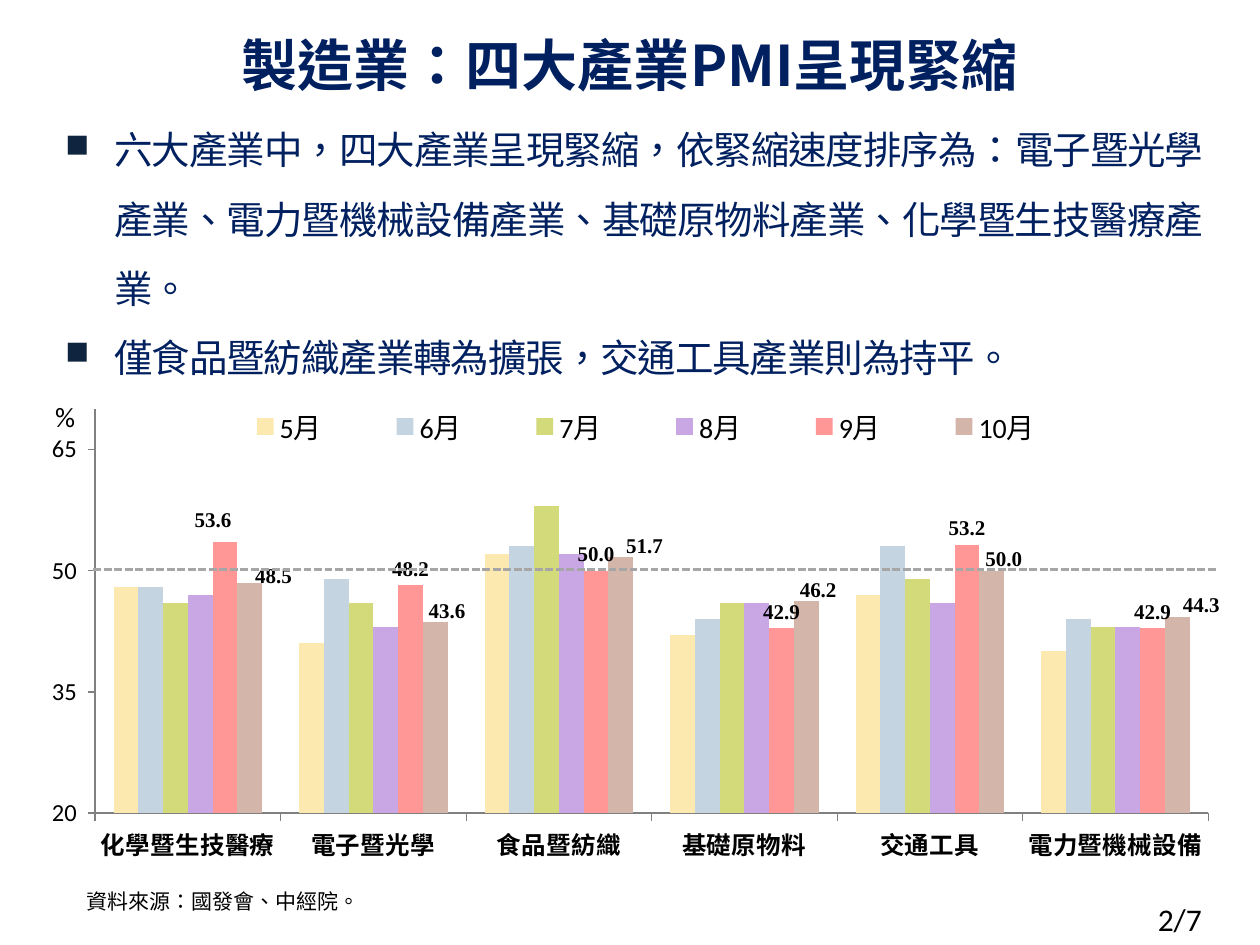
from lxml.etree import SubElement
from pptx import Presentation
from pptx.chart.data import CategoryChartData
from pptx.dml.color import RGBColor
from pptx.enum.chart import XL_CHART_TYPE, XL_LABEL_POSITION, XL_LEGEND_POSITION, XL_TICK_MARK
from pptx.enum.dml import MSO_LINE
from pptx.enum.shapes import MSO_CONNECTOR, MSO_SHAPE
from pptx.enum.text import MSO_ANCHOR, PP_ALIGN
from pptx.oxml import parse_xml
from pptx.oxml.ns import nsdecls, qn
from pptx.util import Inches, Pt

COLORS = {
    "black": "000000", "navy": "002060", "bullet": "0F243E",
    "axis": "808080", "threshold": "A6A6A6",
    "5月": "FCE9AF", "6月": "C5D4E1", "7月": "D2DA7A",
    "8月": "C9A6E4", "9月": "FF9797", "10月": "D4B5AA",
}
LATIN, CJK = "Calibri", "Noto Sans CJK SC"

INDUSTRIES = ["化學暨生技醫療", "電子暨光學", "食品暨紡織", "基礎原物料", "交通工具", "電力暨機械設備"]
MONTHLY_PMI = {
    "5月": [48, 41, 52, 42, 47, 40],
    "6月": [48, 49, 53, 44, 53, 44],
    "7月": [46, 46, 58, 46, 49, 43],
    "8月": [47, 43, 52, 46, 46, 43],
    "9月": [53.6, 48.2, 50, 42.9, 53.2, 42.9],
    "10月": [48.5, 43.6, 51.7, 46.2, 50, 44.3],
}
# Label shifts as fractions of the chart's width and height
LABEL_SHIFTS = {
    "9月": [(-0.01, -0.01), (0, 0), (0, 0), (0, 0), (0, 0), (0, 0)],
    "10月": [(0.02, 0.02), (0.01, 0.01), (0.02, 0.01), (0.01, 0.01), (0.01, 0.01), (0.02, 0.01)],
}

# Each bullet is a list of (text, letter spacing in hundredths of a point)
BULLETS = [
    [("六大產業中，四大產業呈現緊縮，依緊縮速度排序為", -60), ("：", 0),
     ("電子暨光學產業、電力暨機械設備產業、基礎原物料產業、化學暨生技醫療產業。", -60)],
    [("僅食品暨紡織產業轉為擴張，交通工具產業則為持平。", -60)],
]


def rgb(name):
    return RGBColor.from_string(COLORS[name])


def style_font(font, size, name=LATIN, color="black", bold=False):
    font.size, font.name, font.bold = Pt(size), name, bold
    font.color.rgb = rgb(color)


def add_span(para, text, size, name=LATIN, color="black", bold=False, spacing=0):
    span = para.add_run()
    span.text = text
    style_font(span.font, size, name, color, bold)
    properties = span._r.get_or_add_rPr()
    properties.set("lang", "zh-TW")
    properties.set("spc", str(spacing))
    SubElement(properties, qn("a:ea")).set("typeface", name)


def add_text(page, area, text, size, name=LATIN, color="black", bold=False):
    box = page.shapes.add_textbox(*map(Inches, area))
    box.text_frame.word_wrap = True
    para = box.text_frame.paragraphs[0]
    add_span(para, text, size, name, color, bold)
    return box, para


def add_title(page):
    box, para = add_text(page, (0, 0, 10, 1), "製造業：四大產業PMI呈現緊縮", 32, CJK, "navy", True)
    box.text_frame.vertical_anchor = MSO_ANCHOR.MIDDLE
    para.alignment = PP_ALIGN.CENTER
    para.line_spacing = Pt(40)


def set_bullet(para):
    properties = para._p.get_or_add_pPr()
    properties.set("marL", str(Inches(0.49)))
    properties.set("indent", str(Inches(-0.39)))
    color = SubElement(SubElement(properties, qn("a:buClr")), qn("a:srgbClr"))
    color.set("val", COLORS["bullet"])
    SubElement(properties, qn("a:buSzPct")).set("val", "85000")
    SubElement(properties, qn("a:buChar")).set("char", "■")


def add_bullets(page):
    box = page.shapes.add_shape(MSO_SHAPE.ROUNDED_RECTANGLE, *map(Inches, (0.21, 0.71, 9.54, 2.25)))
    box.shadow.inherit = False
    box.fill.background()
    box.line.fill.background()
    frame = box.text_frame
    frame.word_wrap = True
    frame.vertical_anchor = MSO_ANCHOR.TOP
    frame.margin_top = frame.margin_bottom = 0
    for index, spans in enumerate(BULLETS):
        para = frame.add_paragraph() if index else frame.paragraphs[0]
        para.level = 1
        para.alignment = PP_ALIGN.JUSTIFY
        para.line_spacing = 1.5
        set_bullet(para)
        for text, spacing in spans:
            add_span(para, text, 22, CJK, "navy", spacing=spacing)


def manual_layout(**settings):
    parts = "".join(f'<c:{key} val="{value}"/>' for key, value in settings.items())
    return parse_xml(f'<c:layout {nsdecls("c")}><c:manualLayout>{parts}</c:manualLayout></c:layout>')


def style_axis(axis, name, bold=False):
    axis.has_major_gridlines = False
    axis.major_tick_mark = XL_TICK_MARK.OUTSIDE
    axis.minor_tick_mark = XL_TICK_MARK.NONE
    axis.format.line.color.rgb = rgb("axis")
    axis.format.line.width = Pt(0.75)
    style_font(axis.tick_labels.font, 14, name, bold=bold)


def label_points(series, shifts):
    labels = series.data_labels
    labels.show_value = True
    labels.number_format, labels.number_format_is_linked = "0.0", False
    labels.position = XL_LABEL_POSITION.OUTSIDE_END
    style_font(labels.font, 12, "Times New Roman", bold=True)
    for index, (x, y) in enumerate(shifts):
        label = series.points[index].data_label
        style_font(label.font, 12, "Times New Roman", bold=True)
        label.position = XL_LABEL_POSITION.OUTSIDE_END
        index_element = labels._element.findall(qn("c:dLbl"))[index].find(qn("c:idx"))
        number_format = parse_xml(f'<c:numFmt {nsdecls("c")} formatCode="0.0" sourceLinked="0"/>')
        index_element.addnext(number_format)
        index_element.addnext(manual_layout(x=x, y=y))


def add_pmi_chart(page):
    data = CategoryChartData()
    data.categories = INDUSTRIES
    for month, values in MONTHLY_PMI.items():
        data.add_series(month, values)
    chart = page.shapes.add_chart(
        XL_CHART_TYPE.COLUMN_CLUSTERED, *map(Inches, (0.28, 2.93, 9.5, 3.96)), data).chart
    chart.has_title = False
    style_font(chart.font, 18, "Cabin")

    # Bars and their labels
    plot = chart.plots[0]
    plot.gap_width, plot.overlap = 150, 0
    plot.vary_by_categories = False
    for series in plot.series:
        series.format.fill.solid()
        series.format.fill.fore_color.rgb = rgb(series.name)
        if series.name in LABEL_SHIFTS:
            label_points(series, LABEL_SHIFTS[series.name])

    # Axes
    style_axis(chart.category_axis, CJK, bold=True)
    axis = chart.value_axis
    style_axis(axis, LATIN)
    axis.minimum_scale, axis.maximum_scale, axis.major_unit = 20, 70, 15
    axis.tick_labels.number_format = "0_ ;[Red]\\-0\\ "
    axis.tick_labels.number_format_is_linked = False

    # Legend and plot placement
    chart.has_legend = True
    legend = chart.legend
    legend.position = XL_LEGEND_POSITION.TOP
    legend.include_in_layout = False
    style_font(legend.font, 16)
    for old_layout in legend._element.findall(qn("c:layout")):
        legend._element.remove(old_layout)
    legend._element.find(qn("c:legendPos")).addnext(
        manual_layout(xMode="edge", yMode="edge", x=0.13, y=0.07, w=0.76, h=0.09))
    plot_area = chart._chartSpace.chart.plotArea
    for old_layout in plot_area.findall(qn("c:layout")):
        plot_area.remove(old_layout)
    plot_area.insert(0, manual_layout(layoutTarget="inner", xMode="edge", yMode="edge",
                                      x=0.05, y=0.08, w=0.93, h=0.81))


def add_threshold(page):
    line = page.shapes.add_connector(MSO_CONNECTOR.STRAIGHT, *map(Inches, (0.74, 4.52, 9.67, 4.52)))
    line.line.color.rgb = rgb("threshold")
    line.line.width = Pt(1.5)
    line.line.dash_style = MSO_LINE.SQUARE_DOT
    SubElement(line._element.spPr, qn("a:effectLst"))


def main():
    deck = Presentation()
    deck.slide_width, deck.slide_height = Inches(10), Inches(7.5)
    page = deck.slides.add_slide(deck.slide_layouts[6])

    # Chart with the 50 % threshold
    add_pmi_chart(page)
    add_threshold(page)
    add_text(page, (0.34, 3.12, 0.63, 0.37), "%", 16)

    # Heading and findings
    add_title(page)
    add_bullets(page)

    # Source and page number
    _, source = add_text(page, (0.59, 7.04, 9.41, 0.27), "資料來源：國發會、中經院。", 12, "Noto Sans CJK JP")
    source.line_spacing, source.space_before = Pt(12), Pt(2)
    add_text(page, (9.09, 7.09, 0.91, 0.4), "2/7", 18)

    deck.save("out.pptx")


if __name__ == "__main__":
    main()
